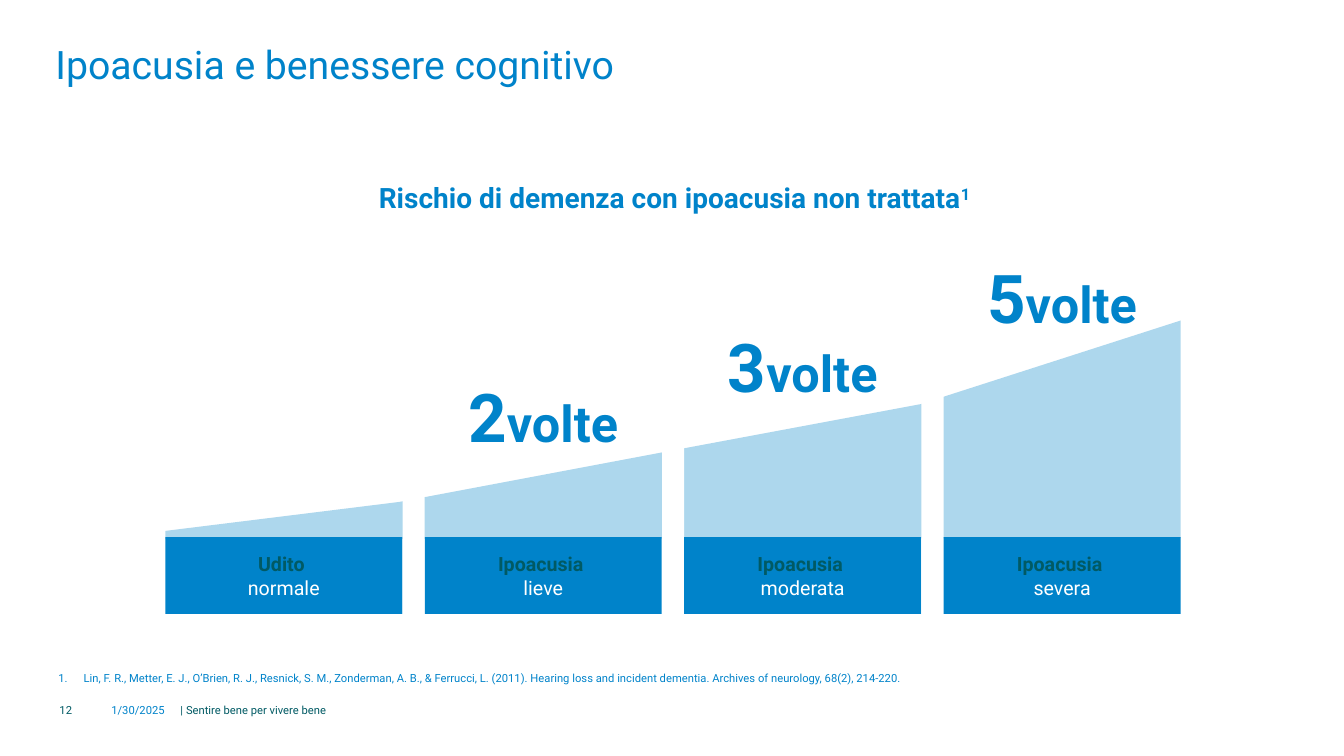
import pptx
import pptx.util
import pptx.dml.color
import pptx.enum.shapes
import pptx.enum.text
import lxml.etree

Inches = pptx.util.Inches
Pt = pptx.util.Pt
ALIGN = pptx.enum.text.PP_ALIGN
ANCHOR = pptx.enum.text.MSO_ANCHOR
COLORS = {"blue": "0083CA", "teal": "005A64", "white": "FFFFFF"}


def style(font, size, color, bold=False):
    font.name = "Roboto"
    font.size = Pt(size)
    font.bold = bold
    font.color.rgb = pptx.dml.color.RGBColor.from_string(COLORS[color])


def label(box, text, size, color, bold=False, align=ALIGN.LEFT, anchor=ANCHOR.TOP):
    area = slide.shapes.add_textbox(*[Inches(n) for n in box])
    frame = area.text_frame
    frame.word_wrap = True
    frame.vertical_anchor = anchor
    frame.margin_left = frame.margin_right = frame.margin_top = frame.margin_bottom = 0
    para = frame.paragraphs[0]
    para.alignment = align
    para.add_run().text = text
    style(para.font, size, color, bold)
    return para


deck = pptx.Presentation()
deck.slide_width = Inches(13.33)
deck.slide_height = Inches(7.5)
slide = deck.slides.add_slide(deck.slide_layouts[6])

title = label((0.55, 0.44, 9.38, 0.43), "Ipoacusia e benessere cognitivo", 28, "blue", anchor=ANCHOR.BOTTOM)
title.line_spacing = 0.9

head = label((3.15, 1.79, 7.08, 0.27), "Rischio di demenza con ipoacusia non trattata",
             20, "blue", True, ALIGN.CENTER)
note = head.add_run()
note.text = "1"
note.font._element.set("baseline", "30000")

ridge = [(1.62, 5.27), (3.96, 4.98), (6.56, 4.49), (9.13, 4.01), (11.71, 3.18), (11.71, 5.34), (1.63, 5.35)]
points = [(Inches(x), Inches(y)) for x, y in ridge]
path = slide.shapes.build_freeform(*points[0], scale=1.0)
path.add_line_segments(points[1:], close=True)
slope = path.convert_to_shape()
slope.shadow.inherit = False
slope.line.fill.background()
slope.fill.solid()
slope.fill.fore_color.rgb = pptx.dml.color.RGBColor.from_string(COLORS["blue"])
tint = slope._element.spPr.find(".//" + pptx.oxml.ns.qn("a:srgbClr"))
lxml.etree.SubElement(tint, pptx.oxml.ns.qn("a:alpha"), val="32000")

STEP = 2.573
GAP = 0.22
LEFT = 1.64
BASE = 6.21
levels = [
    ("Udito", "normale", None, 4.12),
    ("Ipoacusia", "lieve", ("2", 3.72), 4.12),
    ("Ipoacusia", "moderata", ("3", 3.23), 4.12),
    ("Ipoacusia", "severa", ("5", 2.54), 3.8),
]
for i, (name, grade, risk, top) in enumerate(levels):
    x = LEFT + i * STEP
    parts = [("white", (x - GAP, top, GAP, BASE - top)), ("blue", (x, 5.33, 2.35, 0.76))]
    for color, box in parts:
        block = slide.shapes.add_shape(pptx.enum.shapes.MSO_SHAPE.RECTANGLE, *[Inches(n) for n in box])
        block.shadow.inherit = False
        block.line.fill.background()
        block.fill.solid()
        block.fill.fore_color.rgb = pptx.dml.color.RGBColor.from_string(COLORS[color])
    block.text_frame.vertical_anchor = ANCHOR.MIDDLE
    para = block.text_frame.paragraphs[0]
    para.alignment = ALIGN.CENTER
    first = para.add_run()
    first.text = name + " "
    style(first.font, 14, "teal", True)
    para.add_line_break()
    second = para.add_run()
    second.text = grade
    style(second.font, 14, "white")
    if risk:
        count, y = risk
        para = label((x + 0.31, y, 1.73, 0.45), count, 48, "blue", True, ALIGN.CENTER)
        times = para.add_run()
        times.text = "volte"
        times.font.size = Pt(36)

cite = label(
    (0.58, 6.28, 9.43, 0.51),
    "Lin, F. R., Metter, E. J., O’Brien, R. J., Resnick, S. M., Zonderman, A. B., & Ferrucci, L. (2011). "
    "Hearing loss and incident dementia. Archives of neurology, 68(2), 214-220.",
    8, "blue", anchor=ANCHOR.BOTTOM)
props = cite._p.get_or_add_pPr()
props.set("marL", str(Inches(0.25)))
props.set("indent", str(Inches(-0.25)))
tone = lxml.etree.Element(pptx.oxml.ns.qn("a:buClr"))
lxml.etree.SubElement(tone, pptx.oxml.ns.qn("a:srgbClr"), val=COLORS["blue"])
mark = lxml.etree.Element(pptx.oxml.ns.qn("a:buAutoNum"), type="arabicPeriod")
rest = props.find(pptx.oxml.ns.qn("a:defRPr"))
rest.addprevious(tone)
rest.addprevious(mark)

footer = [
    (0.59, 0.24, "12", "teal", ALIGN.LEFT),
    (0.95, 0.84, "1/30/2025", "blue", ALIGN.CENTER),
    (1.79, 7.25, "| Sentire bene per vivere bene", "teal", ALIGN.LEFT),
]
for x, width, text, color, align in footer:
    label((x, 6.98, width, 0.17), text, 8, color, align=align)

deck.save("out.pptx")
